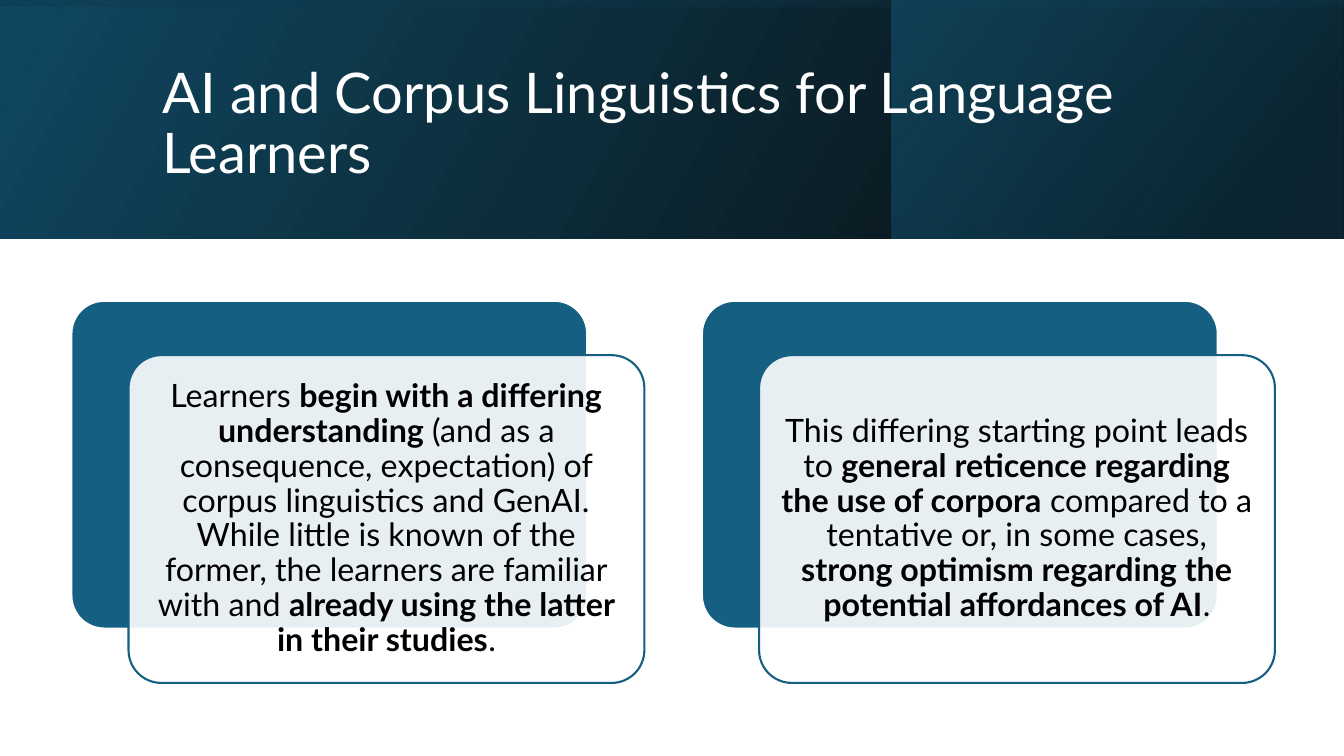
import pptx
import pptx.util
import pptx.dml.color
import pptx.enum.shapes
import pptx.enum.text
import pptx.oxml
import pptx.oxml.ns

Cm = pptx.util.Cm
Pt = pptx.util.Pt
SHAPES = pptx.enum.shapes.MSO_SHAPE
ALIGN = pptx.enum.text.PP_ALIGN
ANCHOR = pptx.enum.text.MSO_ANCHOR

COLORS = {
    "black": "000000",
    "white": "FFFFFF",
    "blue": "156082",
    "navy": "104862",
    "deep": "0B3041",
}
FONT = "Lato"
SLIDE_W, SLIDE_H = 33.87, 19.05
BANNER_H = 6.02

CARD_TEXTS = [
    [
        ("Learners ", False),
        ("begin with a differing understanding ", True),
        ("(and as a consequence, expectation) of corpus linguistics and GenAI. "
         "While little is known of the former, the learners are familiar with and ", False),
        ("already using the latter in their studies", True),
        (".", False),
    ],
    [
        ("This differing starting point leads to ", False),
        ("general reticence regarding the use of corpora", True),
        (" compared to a tentative or, in some cases, ", False),
        ("strong optimism regarding the potential affordances of AI", True),
        (".", False),
    ],
]


def rgb(name):
    return pptx.dml.color.RGBColor.from_string(COLORS[name])


def set_opacity(shape, percents):
    colors = shape._element.spPr.iter(pptx.oxml.ns.qn("a:srgbClr"))
    for color, percent in zip(colors, percents):
        alpha = pptx.oxml.parse_xml(f'<a:alpha {pptx.oxml.ns.nsdecls("a")}/>')
        alpha.set("val", str(percent * 1000))
        color.append(alpha)


def add_gradient(slide, left, top, width, height, stops, angle, rotation=0):
    layer = slide.shapes.add_shape(
        SHAPES.RECTANGLE, Cm(left), Cm(top), Cm(width), Cm(height))
    layer.shadow.inherit = False
    layer.line.fill.background()
    layer.rotation = rotation
    layer._element.spPr.xfrm.set("flipH", "1")
    layer.fill.gradient()
    layer.fill.gradient_angle = 360 - angle
    for stop, (position, color, _) in zip(layer.fill.gradient_stops, stops):
        stop.position = position
        stop.color.rgb = rgb(color)
    set_opacity(layer, [opacity for _, _, opacity in stops])


def add_runs(paragraph, runs, size, color):
    paragraph.line_spacing = 0.9
    for words, bold in runs:
        run = paragraph.add_run()
        run.text = words
        run.font.name = FONT
        run.font.size = Pt(size)
        run.font.bold = bold
        run.font.color.rgb = rgb(color)


def add_banner(slide, left, top, width, height):
    add_gradient(slide, left, top, width, height,
                 [(0, "black", 96), (1, "navy", 100)], 330)
    accent_w = 11.39
    add_gradient(slide, left + width - accent_w - 0.02, top, accent_w, height,
                 [(0.19, "deep", 68), (1, "blue", 48)], 320)
    shift = (width - height) / 2
    add_gradient(slide, left + shift, top - shift, height, width,
                 [(0.23, "navy", 16), (0.99, "black", 45)], 350, 270)

    title = slide.shapes.add_textbox(
        Cm(left + 3.84), Cm(top + 0.97), Cm(27), Cm(4.37)).text_frame
    title.word_wrap = True
    title.vertical_anchor = ANCHOR.MIDDLE
    add_runs(title.paragraphs[0],
             [("AI and Corpus Linguistics for Language Learners", False)], 40, "white")


def add_panel(slide, left, top, width, height, fill, line):
    panel = slide.shapes.add_shape(
        SHAPES.ROUNDED_RECTANGLE, Cm(left), Cm(top), Cm(width), Cm(height))
    panel.adjustments[0] = 0.1
    panel.shadow.inherit = False
    panel.fill.solid()
    panel.fill.fore_color.rgb = rgb(fill)
    panel.line.color.rgb = rgb(line)
    panel.line.width = Pt(1.5)
    return panel


def add_card(slide, left, top, width, height, runs):
    shift_x, shift_y = 1.44, 1.37
    panel_w, panel_h = width - shift_x, height - shift_y
    add_panel(slide, left, top, panel_w, panel_h, "blue", "white")
    front = add_panel(slide, left + shift_x, top + shift_y,
                      panel_w, panel_h, "white", "blue")
    set_opacity(front, [90])
    statement = front.text_frame
    statement.word_wrap = True
    statement.vertical_anchor = ANCHOR.MIDDLE
    statement.margin_left = statement.margin_right = Cm(0.25)
    statement.margin_top = statement.margin_bottom = Cm(0.25)
    statement.paragraphs[0].alignment = ALIGN.CENTER
    add_runs(statement.paragraphs[0], runs, 23, "black")


def main():
    deck = pptx.Presentation()
    deck.slide_width, deck.slide_height = Cm(SLIDE_W), Cm(SLIDE_H)
    slide = deck.slides.add_slide(deck.slide_layouts[6])
    add_banner(slide, 0, 0, SLIDE_W, BANNER_H)
    for index, runs in enumerate(CARD_TEXTS):
        add_card(slide, 1.8 + index * 15.89, 7.58, 14.44, 9.63, runs)
    deck.save("out.pptx")


if __name__ == "__main__":
    main()
